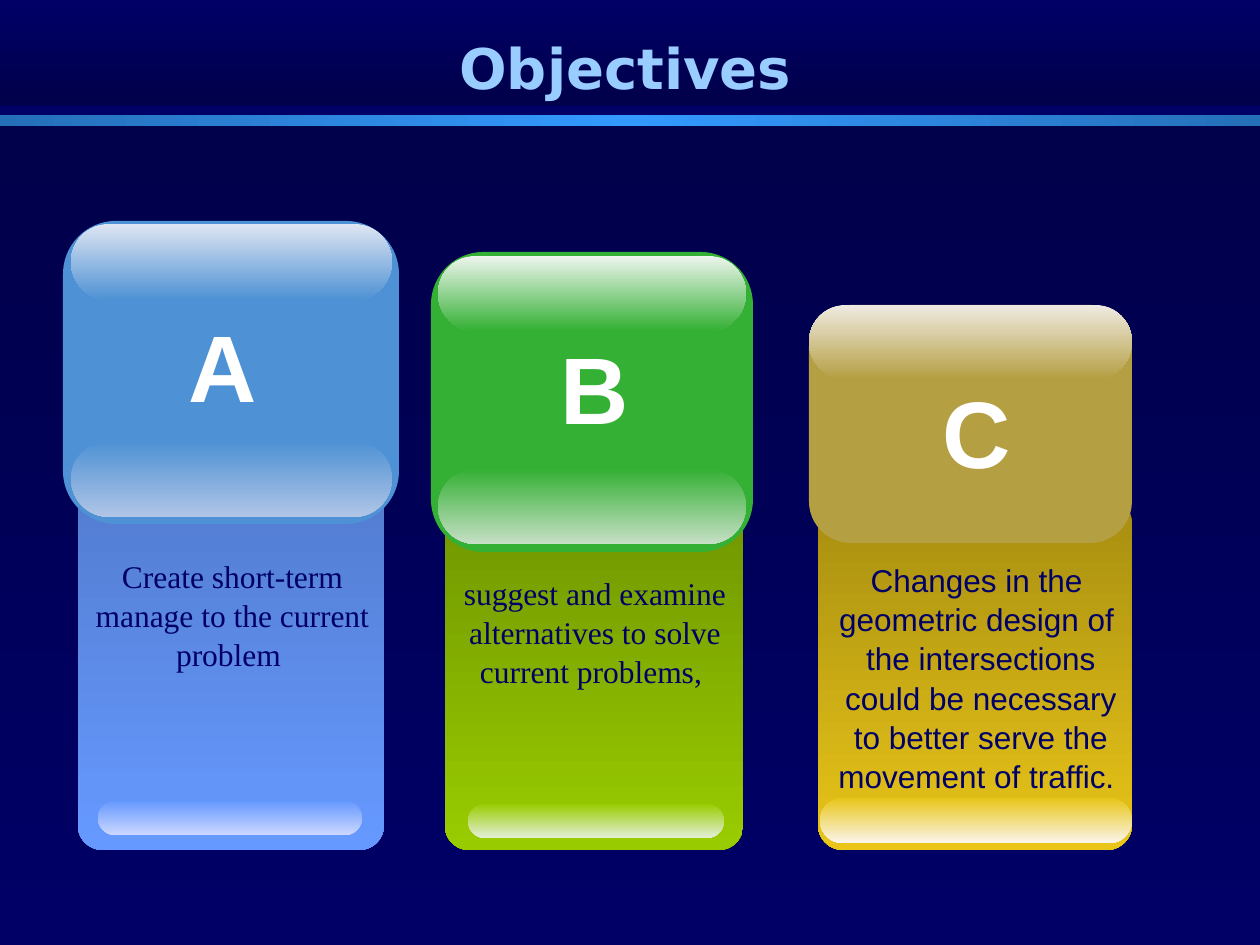
from pptx import Presentation, util as u
from pptx.dml.color import RGBColor
from pptx.enum import shapes, text
from pptx.oxml import parse_xml
from pptx.oxml.ns import nsdecls

PX = 914400 // 126
HEX = {
    "navy": "000066", "bar": "3399FF", "title": "99CCFF", "white": "FFFFFF",
    "sky": "4E91D4", "blue": "6699FF", "leaf": "34B034", "lime": "99CC00",
    "sand": "B59F43", "gold": "E8C518",
}

BANDS = [
    ((0, 0, 1260, 106), ["navy", ("navy", "shade", 50)], 90),
    ((0, 125, 1260, 820), [("navy", "shade", 50), "navy"], 90),
    ((0, 115, 1260, 11), [("bar", "shade", 48), "bar", ("bar", "shade", 48)], 0),
]
TITLE = ("Objectives", (32, 21, 1187, 92))

CARDS = [
    dict(
        body=((78, 456, 306, 394), "blue", 60),
        head=((63, 221, 336, 303), "sky"),
        shine=[((71, 441, 321, 76), ["sky", ("sky", "tint", 61)]),
               ((71, 224, 321, 76), [("sky", "tint", 28), "sky"])],
        foot=((98, 801, 264, 34), 46),
        mark=("A", (175, 297, 95, 204), False),
        note=(["Create short-term manage to the current problem "],
              (78, 549, 309, 178), "Times New Roman"),
    ),
    dict(
        body=((818, 498, 314, 352), "gold", 47),
        head=((809, 305, 323, 238), "sand"),
        shine=[((809, 305, 323, 74), [("sand", "tint", 25), "sand"])],
        foot=((820, 798, 312, 45), 18),
        mark=("C", (925, 363, 103, 120), False),
        note=(["Changes in the geometric design of", " the intersections",
               " could be necessary", " to better serve the movement of traffic."],
              (798, 553, 357, 280), "Arial"),
    ),
    dict(
        body=((445, 494, 298, 356), "lime", 48),
        head=((431, 252, 322, 300), "leaf"),
        shine=[((438, 469, 308, 75), ["leaf", ("leaf", "tint", 45)]),
               ((438, 256, 308, 75), [("leaf", "tint", 15), "leaf"])],
        foot=((468, 804, 256, 34), 33),
        mark=("B", (473, 319, 244, 178), True),
        note=(["suggest and examine alternatives to solve current problems, "],
              (440, 566, 310, 175), "Times New Roman"),
    ),
]

deck = Presentation()
deck.slide_width, deck.slide_height = 1260 * PX, 945 * PX
slide = deck.slides.add_slide(deck.slide_layouts[6])


def rgb(name):
    return RGBColor.from_string(HEX[name])


def scale(box):
    return [v * PX for v in box]


def blend(shape, stops, angle):
    rows = ""
    for i, stop in enumerate(stops):
        name, mode, pct = (stop, "tint", 100) if isinstance(stop, str) else stop
        mod = f'<a:{mode} val="{pct * 1000}"/>' if pct < 100 else ""
        pos = i * 100000 // (len(stops) - 1)
        rows += f'<a:gs pos="{pos}"><a:srgbClr val="{HEX[name]}">{mod}</a:srgbClr></a:gs>'
    grad = parse_xml(
        f'<a:gradFill {nsdecls("a")} rotWithShape="1"><a:gsLst>{rows}</a:gsLst>'
        f'<a:lin ang="{angle * 60000}" scaled="1"/></a:gradFill>')
    old = shape.fill
    old.background()
    node = shape.element.spPr.find("{*}noFill")
    node.getparent().replace(node, grad)


def block(box, fill, curve=None, angle=90):
    kind = shapes.MSO_SHAPE.RECTANGLE if curve is None else shapes.MSO_SHAPE.ROUNDED_RECTANGLE
    shape = slide.shapes.add_shape(kind, *scale(box))
    shape.shadow.inherit = False
    shape.line.fill.background()
    if curve is not None:
        shape.adjustments[0] = curve
    if isinstance(fill, str):
        shape.fill.solid()
        shape.fill.fore_color.rgb = rgb(fill)
    else:
        blend(shape, fill, angle)


def write(lines, box, font, size, color, bold=False, wrap=True, middle=False, space=1.04):
    frame = slide.shapes.add_textbox(*scale(box)).text_frame
    frame.word_wrap = wrap
    if middle:
        frame.vertical_anchor = text.MSO_ANCHOR.MIDDLE
    for i, line in enumerate(lines):
        para = frame.paragraphs[0] if i == 0 else frame.add_paragraph()
        para.text = line
        para.alignment = text.PP_ALIGN.CENTER
        para.line_spacing = space
        para.font.name, para.font.size = font, u.Pt(size)
        para.font.bold = bold
        para.font.color.rgb = rgb(color)


back = slide.background.fill
back.solid()
back.fore_color.rgb = rgb("navy")
for box, stops, angle in BANDS:
    block(box, stops, angle=angle)
write([TITLE[0]], TITLE[1], "DejaVu Sans", 32, "title", bold=True, middle=True, space=1.0)

for card in CARDS:
    box, hue, dark = card["body"]
    block(box, [(hue, "shade", dark), hue], 0.08)
    block(*card["head"], 0.175)
    for area, stops in card["shine"]:
        block(area, stops, 0.5)
    foot, light = card["foot"]
    block(foot, [hue, (hue, "tint", light)], 0.5)
    lines, area, font = card["note"]
    write(lines, area, font, 18, "navy")
    mark, area, wrap = card["mark"]
    write([mark], area, "Arial", 54, "white", bold=True, wrap=wrap)

deck.save("out.pptx")
